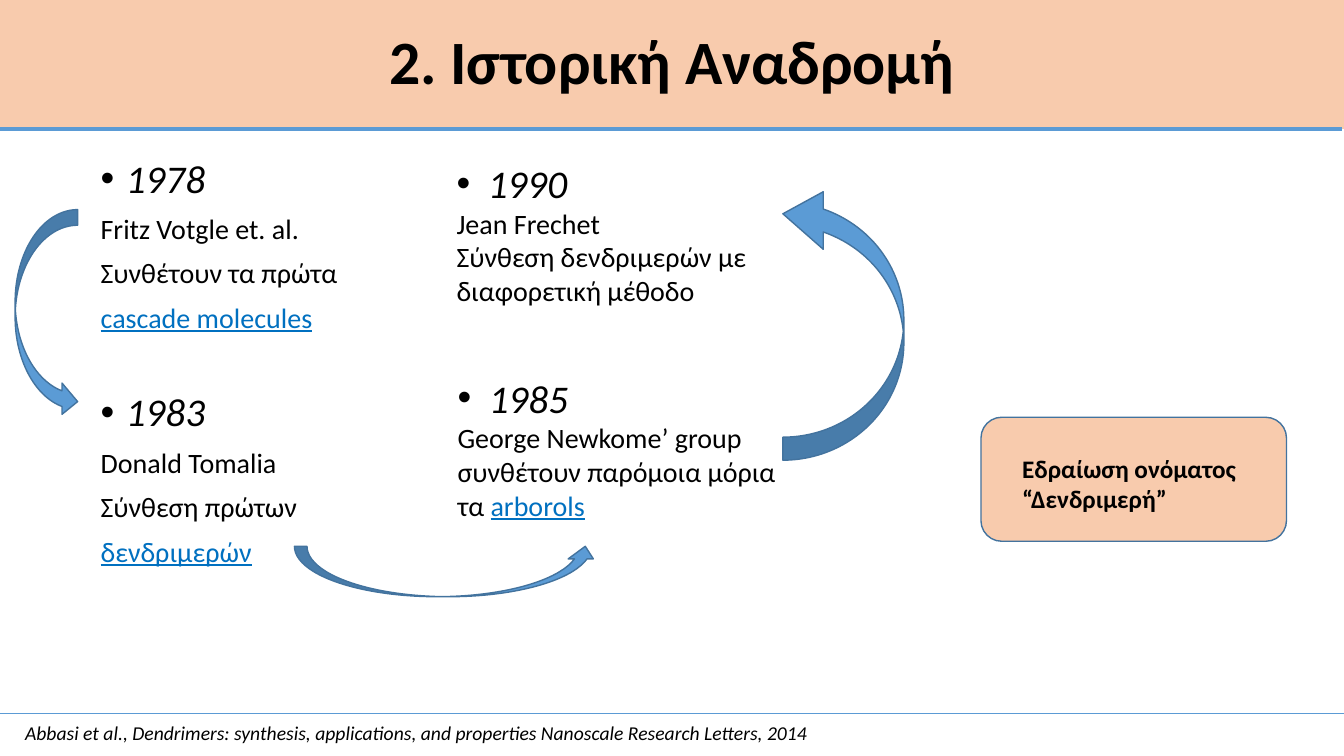
from dataclasses import dataclass

from lxml.etree import SubElement
from pptx import Presentation
from pptx.dml.color import RGBColor
from pptx.enum.shapes import MSO_CONNECTOR, MSO_SHAPE
from pptx.enum.text import MSO_ANCHOR, PP_ALIGN
from pptx.oxml.ns import qn
from pptx.util import Inches, Pt


@dataclass(frozen=True)
class Theme:
    """Colours, font and type sizes of the slide."""
    font: str = "Calibri"
    text: str = "000000"
    term: str = "0070C0"
    peach: str = "F8CBAD"
    blue: str = "5B9BD5"
    edge: str = "43739E"
    title: int = 44
    year: int = 28
    body: int = 20
    label: int = 18
    source: int = 14


T = Theme()


def add_run(p, text, size, color=T.text, **fmt):
    """Append a formatted run to a paragraph."""
    r = p.add_run()
    r.text = text
    fmt.update(name=T.font, size=Pt(size))
    for key, value in fmt.items():
        setattr(r.font, key, value)
    r.font.color.rgb = RGBColor.from_string(color)


def add_text(s, box, wrap=True):
    """Add an empty text box and return its text frame."""
    tf = s.shapes.add_textbox(*map(Inches, box)).text_frame
    tf.word_wrap = wrap
    return tf


def next_paragraph(tf):
    """Return the unused first paragraph or a new one."""
    p = tf.paragraphs[0]
    return tf.add_paragraph() if p.runs else p


def add_figure(s, kind, box, fill, edge=None):
    """Add a flat preset shape."""
    sp = s.shapes.add_shape(kind, *map(Inches, box))
    sp.shadow.inherit = False
    sp.fill.solid()
    sp.fill.fore_color.rgb = RGBColor.from_string(fill)
    if edge:
        sp.line.color.rgb = RGBColor.from_string(edge)
        sp.line.width = Pt(1)
    else:
        sp.line.fill.background()
    return sp


def add_rule(s, left, right, y, width):
    """Draw a horizontal rule."""
    ends = map(Inches, (left, y, right, y))
    line = s.shapes.add_connector(MSO_CONNECTOR.STRAIGHT, *ends)
    line.line.color.rgb = RGBColor.from_string(T.blue)
    line.line.width = Pt(width)
    SubElement(line._element.spPr, qn("a:effectLst"))


def add_header(s, box, title):
    """Place the title band and the rule under it."""
    left, top, width, height = box
    sp = add_figure(s, MSO_SHAPE.RECTANGLE, box, T.peach)
    tf = sp.text_frame
    tf.vertical_anchor = MSO_ANCHOR.MIDDLE
    p = tf.paragraphs[0]
    p.alignment, p.line_spacing = PP_ALIGN.CENTER, 0.9
    add_run(p, title, T.title, bold=True)
    add_rule(s, left - 0.02, left + width - 0.02, top + height, 3)


def add_events(s, box, events, indent, **spacing):
    """Stack dated events, each a bulleted year with its lines."""
    tf = add_text(s, box)
    for i, (year, lines) in enumerate(events):
        p = next_paragraph(tf)
        pPr = p._p.get_or_add_pPr()
        pPr.set("marL", str(Inches(indent)))
        pPr.set("indent", str(-Inches(indent)))
        rows = [p] + [tf.add_paragraph() for _ in lines]
        for row in rows:
            for key, value in spacing.items():
                setattr(row, key, value)
        if i:
            p.space_before = Pt(42)
        SubElement(pPr, qn("a:buFont")).set("typeface", "Arial")
        SubElement(pPr, qn("a:buChar")).set("char", "•")
        add_run(p, year, T.year, italic=True)
        for row, (plain, term) in zip(rows[1:], lines):
            if plain:
                add_run(row, plain, T.body)
            if term:
                add_run(row, term, T.body, T.term, underline=True)


def add_arrow(s, kind, box, rotation=0, adjustments=()):
    """Place a curved arrow between two events."""
    sp = add_figure(s, kind, box, T.blue, T.edge)
    sp.rotation = rotation
    for i, value in enumerate(adjustments):
        sp.adjustments[i] = value


def add_callout(s, box, lines):
    """Place the rounded box with its bold label."""
    left, top, width, height = box
    add_figure(s, MSO_SHAPE.ROUNDED_RECTANGLE, box, T.peach, T.edge)
    tf = add_text(s, (left + 0.31, top + 0.31, 2.4, 0.71), wrap=False)
    for line in lines:
        add_run(next_paragraph(tf), line, T.label, bold=True)


def add_footer(s, box, source):
    """Place the thin rule and the source under it."""
    left, top, width, height = box
    add_rule(s, left - 0.02, left + width, top, 0.5)
    tf = add_text(s, (left + 0.15, top + 0.02, 8, 0.34), wrap=False)
    add_run(tf.paragraphs[0], source, T.source, italic=True)


def main():
    """Build the slide and save it."""
    prs = Presentation()
    prs.slide_width, prs.slide_height = Inches(13.33), Inches(7.5)
    s = prs.slides.add_slide(prs.slide_layouts[6])
    early = [
        ("1978", [("Fritz Votgle et. al.", ""), ("Συνθέτουν τα πρώτα", ""),
                  ("", "cascade molecules")]),
        ("1983", [("Donald Tomalia", ""), ("Σύνθεση πρώτων", ""),
                  ("", "δενδριμερών")]),
    ]
    arborols = ("1985", [("George Newkome’ group", ""),
                         ("συνθέτουν παρόμοια μόρια", ""),
                         ("τα ", "arborols")])
    method = ("1990", [("Jean Frechet", ""), ("Σύνθεση δενδριμερών με", ""),
                       ("διαφορετική μέθοδο", "")])
    add_header(s, (0, 0, 13.33, 1.28), "2. Ιστορική Αναδρομή")
    add_events(s, (0.9, 1.53, 2.8, 4.76), early, 0.25,
               line_spacing=0.9, space_before=Pt(10))
    add_events(s, (4.44, 3.66, 3.46, 1.58), [arborols], 0.31)
    add_events(s, (4.43, 1.53, 3.46, 1.58), [method], 0.31)
    add_arrow(s, MSO_SHAPE.CURVED_RIGHT_ARROW, (0.15, 2.08, 0.62, 2.06))
    add_arrow(s, MSO_SHAPE.CURVED_UP_ARROW, (2.92, 5.42, 3.01, 0.5))
    add_arrow(s, MSO_SHAPE.CURVED_UP_ARROW, (7, 2.6, 2.73, 1.2), 270,
              (0.19, 0.476, 0.334))
    add_callout(s, (9.73, 4.14, 3.03, 1.23),
                ["Εδραίωση ονόματος", "“Δενδριμερή”"])
    add_footer(s, (0, 7.08, 13.33, 0.42),
               "Abbasi et al., Dendrimers: synthesis, applications, and "
               "properties Nanoscale Research Letters, 2014")
    prs.save("out.pptx")


if __name__ == "__main__":
    main()
